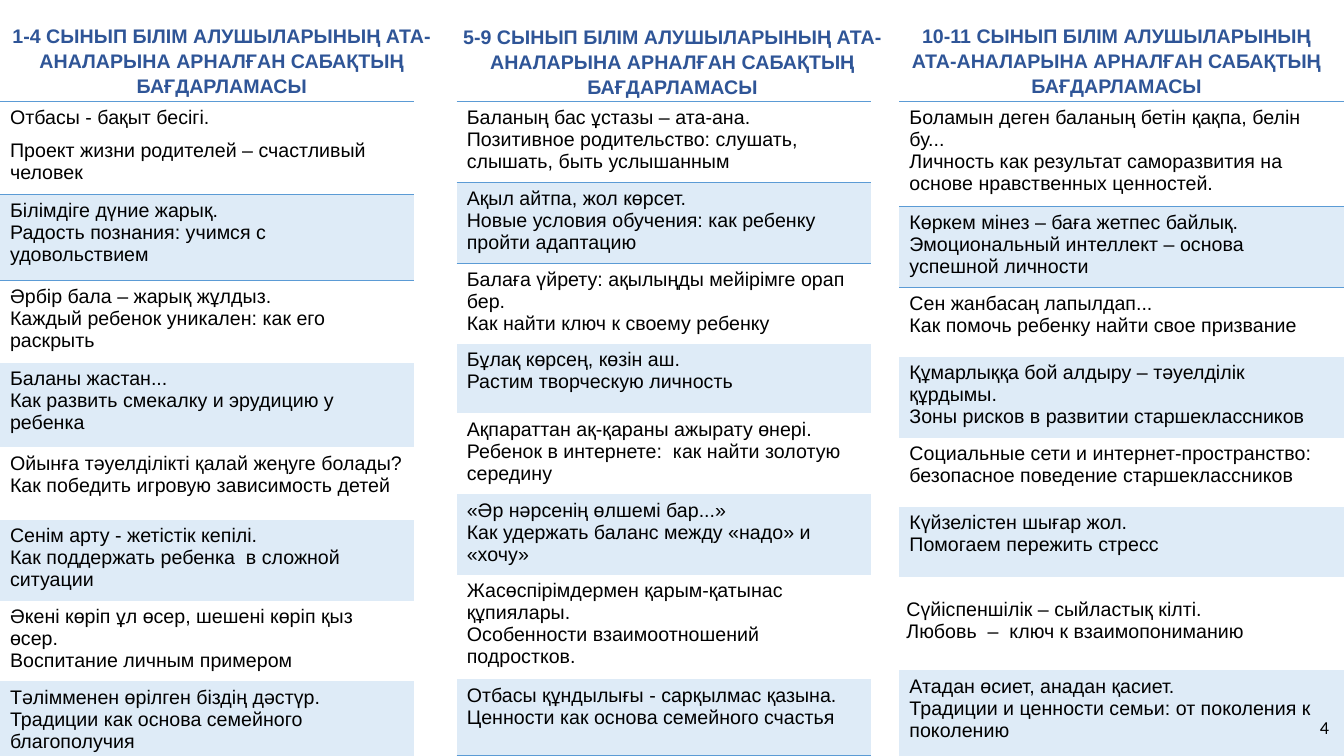
from lxml.etree import SubElement
from pptx import Presentation
from pptx.dml.color import RGBColor
from pptx.enum.text import MSO_ANCHOR as Anchor, PP_ALIGN as Align
from pptx.oxml.ns import qn
from pptx.util import Inches, Pt

BLUE, RULE, BAND, BLACK = "2F5597", "5B9BD5", "DEEBF7", "000000"
NO_STYLE = "{2D5ABB26-0587-4C30-8999-92F81FD0307C}"
HEADING_END = "СЫНЫП БІЛІМ АЛУШЫЛАРЫНЫҢ АТА-АНАЛАРЫНА АРНАЛҒАН САБАҚТЫҢ БАҒДАРЛАМАСЫ"
PROGRAM_TOP = 1.01
HEADING_HEIGHT = 0.81
PAGE_NUMBER = "4"

# One program per grade group; topics are (row height, Kazakh line, Russian line)
PROGRAMS = [
    {
        "grades": "1-4", "heading_at": (-0.13, 0.17, 4.66), "left": 0, "width": 4.11,
        "topics": [
            (0.92, "Отбасы - бақыт бесігі.", "Проект жизни родителей – счастливый человек"),
            (0.85, "Білімдіге дүние жарық.", "Радость познания: учимся с удовольствием"),
            (0.82, "Әрбір бала – жарық жұлдыз.", "Каждый ребенок уникален: как его раскрыть"),
            (0.84, "Баланы жастан...", "Как развить смекалку и эрудицию у ребенка"),
            (0.72, "Ойынға тәуелділікті қалай жеңуге болады?",
             "Как победить игровую зависимость детей"),
            (0.8, "Сенім арту - жетістік кепілі.", "Как поддержать ребенка  в сложной ситуации"),
            (0.8, "Әкені көріп ұл өсер, шешені көріп қыз өсер.", "Воспитание личным примером"),
            (0.85, "Тәлімменен өрілген біздің дәстүр.",
             "Традиции как основа семейного благополучия"),
        ],
    },
    {
        "grades": "5-9", "heading_at": (4.27, 0.18, 4.8), "left": 4.53, "width": 4.11,
        "topics": [
            (0.8, "Баланың бас ұстазы – ата-ана.",
             "Позитивное родительство: слушать, слышать, быть услышанным"),
            (0.8, "Ақыл айтпа, жол көрсет.",
             "Новые условия обучения: как ребенку пройти адаптацию"),
            (0.8, "Балаға үйрету: ақылыңды мейірімге орап бер.",
             "Как найти ключ к своему ребенку"),
            (0.69, "Бұлақ көрсең, көзін аш.", "Растим творческую личность"),
            (0.8, "Ақпараттан ақ-қараны ажырату өнері.",
             "Ребенок в интернете:  как найти золотую середину"),
            (0.8, "«Әр нәрсенің өлшемі бар...»", "Как удержать баланс между «надо» и «хочу»"),
            (1.03, "Жасөспірімдермен қарым-қатынас құпиялары.",
             "Особенности взаимоотношений подростков."),
            (0.76, "Отбасы құндылығы - сарқылмас қазына.",
             "Ценности как основа семейного счастья"),
        ],
    },
    {
        "grades": "10-11", "heading_at": (8.87, 0.17, 4.41), "left": 8.92, "width": 4.41,
        "topics": [
            (1.04, "Боламын деген баланың бетін қақпа, белін бу...",
             "Личность как результат саморазвития на основе нравственных ценностей."),
            (0.8, "Көркем мінез – баға жетпес байлық.",
             "Эмоциональный интеллект – основа успешной личности"),
            (0.69, "Сен жанбасаң лапылдап...", "Как помочь ребенку найти свое призвание"),
            (0.8, "Құмарлыққа бой алдыру – тәуелділік құрдымы.",
             "Зоны рисков в развитии старшеклассников"),
            (0.69, "Социальные сети и интернет-пространство: "
             "безопасное поведение старшеклассников"),
            (0.69, "Күйзелістен шығар жол.", "Помогаем пережить стресс"),
            (0.93, "Сүйіспеншілік – сыйластық кілті.", "Любовь  –  ключ к взаимопониманию"),
            (1, "Атадан өсиет, анадан қасиет.",
             "Традиции и ценности семьи: от поколения к поколению"),
        ],
    },
]
# Cells that differ from the rest, by (grades, row)
SPACED_TOPICS = {("1-4", 0): 8}
INSET_TOPICS = {("10-11", 6): (0.07, 0.22)}


def color(hex_string):
    return RGBColor.from_string(hex_string)


def style(paragraph, size, ink, bold=False, face="Arial"):
    font = paragraph.font
    font.size, font.bold, font.name = Pt(size), bold, face
    font.color.rgb = color(ink)


def add_label(slide, text, left, top, width, height, align):
    frame = slide.shapes.add_textbox(*map(Inches, (left, top, width, height))).text_frame
    frame.word_wrap = True
    frame.text = text
    frame.paragraphs[0].alignment = align
    return frame


def add_rule(cell, side):
    line = SubElement(cell._tc.get_or_add_tcPr(), qn(f"a:{side}"), w=str(Pt(1)))
    fill = SubElement(line, qn("a:solidFill"))
    SubElement(fill, qn("a:srgbClr"), val=RULE)


def fill_topic(cell, lines, row, last, key):
    # Rules frame the first row and close the table
    if row <= 1:
        add_rule(cell, "lnT")
    if row in (0, last):
        add_rule(cell, "lnB")
    if row % 2:
        cell.fill.solid()
        cell.fill.fore_color.rgb = color(BAND)
    else:
        cell.fill.background()
    side, top = INSET_TOPICS.get(key, (0.1, 0.05))
    cell.margin_left = cell.margin_right = Inches(side)
    cell.margin_top = Inches(top)
    cell.margin_bottom = Inches(0 if key in INSET_TOPICS else 0.05)
    cell.text = "\n".join(lines)
    for paragraph in cell.text_frame.paragraphs:
        paragraph.space_after = Pt(SPACED_TOPICS.get(key, 0))
        style(paragraph, 14, BLACK)


def add_program(slide, program):
    # Heading
    grades, topics = program["grades"], program["topics"]
    heading = add_label(slide, f"{grades} {HEADING_END}", *program["heading_at"],
                        HEADING_HEIGHT, Align.CENTER).paragraphs[0]
    heading.line_spacing = 1.07
    style(heading, 14, BLUE, bold=True)

    # Topics
    total = sum(topic[0] for topic in topics)
    table = slide.shapes.add_table(
        len(topics), 1, Inches(program["left"]), Inches(PROGRAM_TOP),
        Inches(program["width"]), Inches(total)).table
    table.first_row = table.horz_banding = False
    table._tbl.tblPr.find(qn("a:tableStyleId")).text = NO_STYLE
    for row, (height, *lines) in enumerate(topics):
        table.rows[row].height = Inches(height)
        fill_topic(table.cell(row, 0), lines, row, len(topics) - 1, (grades, row))


def main():
    deck = Presentation()
    deck.slide_width, deck.slide_height = Inches(13.33), Inches(7.5)
    slide = deck.slides.add_slide(deck.slide_layouts[6])
    for program in PROGRAMS:
        add_program(slide, program)

    # Page number
    number = add_label(slide, PAGE_NUMBER, 12.48, 6.93, 0.8, 0.57, Align.RIGHT)
    number.vertical_anchor = Anchor.MIDDLE
    style(number.paragraphs[0], 13, BLACK, face="Calibri")
    deck.save("out.pptx")


if __name__ == "__main__":
    main()
